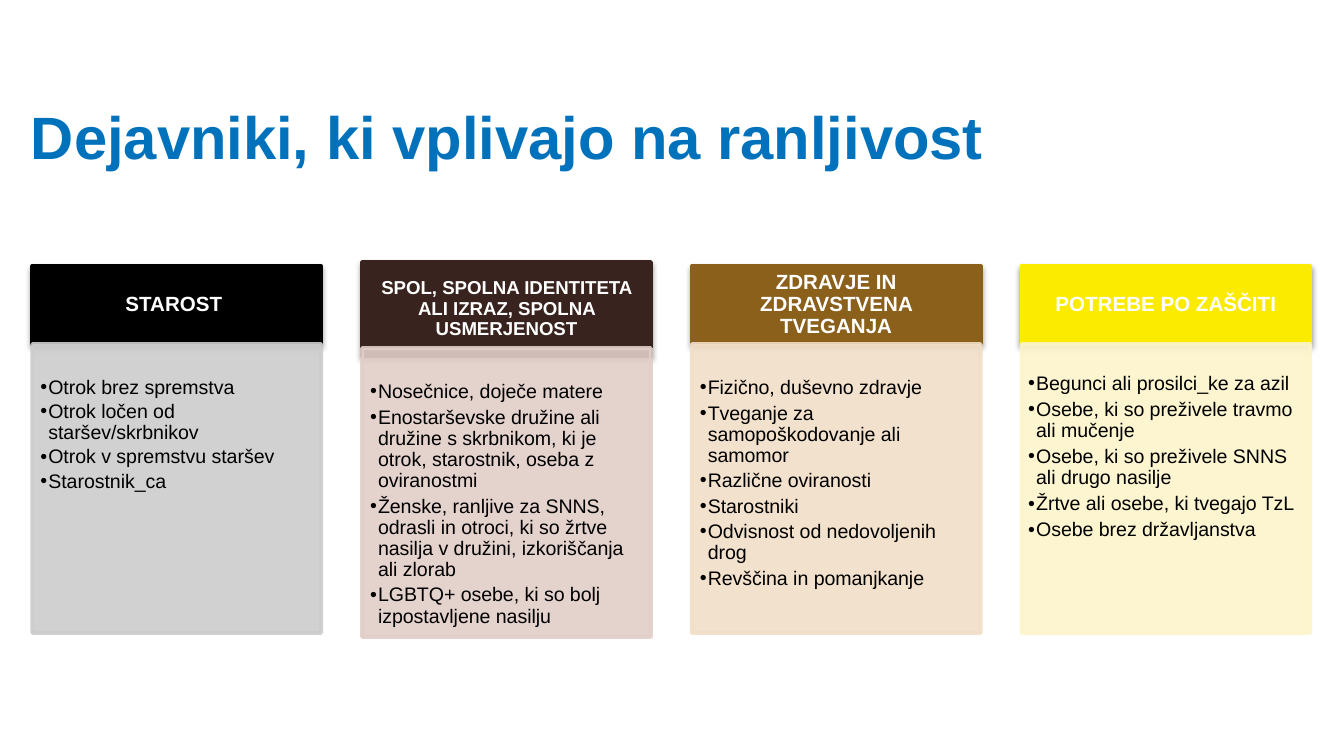
from dataclasses import dataclass

from lxml.etree import SubElement
from pptx import Presentation
from pptx.dml.color import RGBColor
from pptx.enum.shapes import MSO_SHAPE
from pptx.enum.text import MSO_ANCHOR, PP_ALIGN
from pptx.oxml.ns import qn
from pptx.util import Inches, Pt

SLIDE_WIDTH = 10
SLIDE_HEIGHT = SLIDE_WIDTH * 9 / 16
GRID_LEFT, LAST_COLUMN_LEFT, CARD_WIDTH = 0.24, 7.6, 2.15
HEADER_TOP, BODY_TOP, BODY_HEIGHT = 1.98, 2.56, 2.15


@dataclass
class Card:
    heading: str
    items: list[str]
    dark: str
    light: str
    heading_size: float = 11
    header_height: float = 0.58
    header_shift: float = 0
    body_shift: float = 0
    body_inset: float = 0.06
    first_line: float = 0.25
    item_gap: float = 2.3


CARDS = [
    Card("STAROST ", [
        "Otrok brez spremstva",
        "Otrok ločen od staršev/skrbnikov",
        "Otrok v spremstvu staršev",
        "Starostnik_ca",
    ], "000000", "CCCCCC", item_gap=1.6),
    Card("SPOL, SPOLNA IDENTITETA ALI IZRAZ, SPOLNA USMERJENOST", [
        "Nosečnice, doječe matere",
        "Enostarševske družine ali družine s skrbnikom, ki je otrok, starostnik, oseba z oviranostmi",
        "Ženske, ranljive za SNNS, odrasli in otroci, ki so žrtve nasilja v družini, izkoriščanja ali zlorab",
        "LGBTQ+ osebe, ki so bolj izpostavljene nasilju",
    ], "38231E", "E2CEC8", heading_size=10, header_height=0.7,
        header_shift=-0.03, body_shift=0.03),
    Card("ZDRAVJE IN ZDRAVSTVENA TVEGANJA", [
        "Fizično, duševno zdravje",
        "Tveganje za samopoškodovanje ali samomor",
        "Različne oviranosti",
        "Starostniki",
        "Odvisnost od nedovoljenih drog",
        "Revščina in pomanjkanje",
    ], "8B601B", "F1DEC7"),
    Card("POTREBE PO ZAŠČITI", [
        "Begunci ali prosilci_ke za azil",
        "Osebe, ki so preživele travmo ali mučenje",
        "Osebe, ki so preživele SNNS ali drugo nasilje",
        "Žrtve ali osebe, ki tvegajo TzL",
        "Osebe brez državljanstva",
    ], "FBEB00", "FCF4CA", body_inset=0.05, first_line=0.22, item_gap=2.6),
]
COLUMN_PITCH = (LAST_COLUMN_LEFT - GRID_LEFT) / (len(CARDS) - 1)


def color(value: str) -> RGBColor:
    return RGBColor.from_string(value)


def style_font(para, size: float, value: str, bold: bool = False) -> None:
    para.line_spacing = 0.9
    para.font.name = "Arial"
    para.font.size = Pt(size)
    para.font.bold = bold
    para.font.color.rgb = color(value)


def set_margins(frame, left: float, top: float, right: float, bottom: float) -> None:
    frame.margin_left, frame.margin_top = Inches(left), Inches(top)
    frame.margin_right, frame.margin_bottom = Inches(right), Inches(bottom)


def add_panel(page, column: int, top: float, height: float, value: str):
    box = page.shapes.add_shape(
        MSO_SHAPE.RECTANGLE, Inches(GRID_LEFT + column * COLUMN_PITCH),
        Inches(top), Inches(CARD_WIDTH), Inches(height))
    box.shadow.inherit = False
    box.fill.solid()
    box.fill.fore_color.rgb = color(value)
    box.line.color.rgb = color(value)
    box.line.width = Pt(2)
    box.text_frame.word_wrap = True
    return box


def add_alpha(element, percent: int) -> None:
    SubElement(element, qn("a:alpha"), val=str(percent * 1000))


def add_soft_shadow(box) -> None:
    effects = box._element.spPr.find(qn("a:effectLst"))
    shadow = SubElement(effects, qn("a:outerShdw"), blurRad=str(Pt(3.1)),
                        dist=str(Pt(1.6)), dir="5400000", rotWithShape="0")
    add_alpha(SubElement(shadow, qn("a:srgbClr"), val="000000"), 38)


def add_header(page, column: int, card: Card) -> None:
    box = add_panel(page, column, HEADER_TOP + card.header_shift,
                    card.header_height, card.dark)
    add_soft_shadow(box)
    frame = box.text_frame
    set_margins(frame, 0.09, 0.05, 0.09, 0.05)
    frame.vertical_anchor = MSO_ANCHOR.MIDDLE
    para = frame.paragraphs[0]
    para.text = card.heading
    para.alignment = PP_ALIGN.CENTER
    style_font(para, card.heading_size, "FFFFFF", bold=True)


def add_body(page, column: int, card: Card) -> None:
    box = add_panel(page, column, BODY_TOP + card.body_shift, BODY_HEIGHT, card.light)
    for element in box._element.spPr.iter(qn("a:srgbClr")):
        add_alpha(element, 90)
    frame = box.text_frame
    set_margins(frame, card.body_inset, card.first_line, 0.08, 0.09)
    frame.vertical_anchor = MSO_ANCHOR.TOP
    for index, item in enumerate(card.items):
        para = frame.paragraphs[0] if index == 0 else frame.add_paragraph()
        para.text = item
        para.alignment = PP_ALIGN.LEFT
        para.space_after = Pt(card.item_gap)
        properties = para._p.get_or_add_pPr()
        properties.set("marL", str(Inches(0.06)))
        properties.set("indent", str(Inches(-0.06)))
        SubElement(properties, qn("a:buFont"), typeface="Arial")
        SubElement(properties, qn("a:buChar"), char="•")
        style_font(para, 10.5, "000000")


def add_title(page, text: str) -> None:
    title = page.shapes.title
    title.left, title.top = Inches(0.23), Inches(0.22)
    title.width, title.height = Inches(9.53), Inches(1.06)
    frame = title.text_frame
    frame.word_wrap = True
    frame.vertical_anchor = MSO_ANCHOR.BOTTOM
    set_margins(frame, 0, 0, 0, 0)
    para = frame.paragraphs[0]
    para.text = text
    para.alignment = PP_ALIGN.LEFT
    style_font(para, 32, "0072BC", bold=True)


def main() -> None:
    deck = Presentation()
    deck.slide_width, deck.slide_height = Inches(SLIDE_WIDTH), Inches(SLIDE_HEIGHT)
    page = deck.slides.add_slide(deck.slide_layouts[5])
    add_title(page, "Dejavniki, ki vplivajo na ranljivost")
    for column, card in enumerate(CARDS):
        add_header(page, column, card)
        add_body(page, column, card)
    deck.save("out.pptx")


if __name__ == "__main__":
    main()
